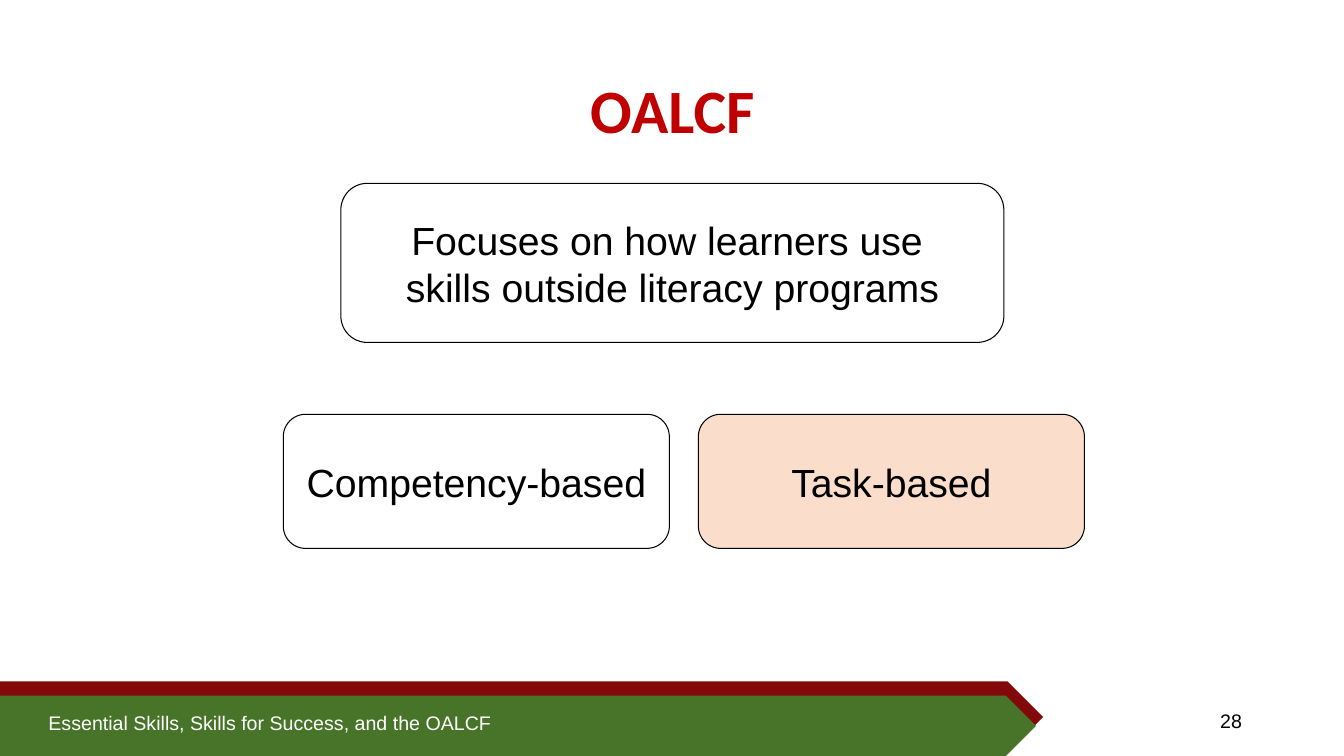
import pptx
import pptx.dml.color
import pptx.enum.shapes
import pptx.enum.text
import pptx.oxml.ns
import pptx.util
from lxml import etree

Cm = pptx.util.Cm
Pt = pptx.util.Pt
Shape = pptx.enum.shapes.MSO_SHAPE
Align = pptx.enum.text.PP_ALIGN
Anchor = pptx.enum.text.MSO_ANCHOR

# Content
TITLE = "OALCF"
FOCUS = ["Focuses on how learners use ", "skills outside literacy programs"]
APPROACHES = [("Competency-based", None), ("Task-based", "ED7D31")]
FOOTER = "Essential Skills, Skills for Success, and the OALCF"
PAGE_NUMBER = "28"

# Footer arrows: top, width, height, colour
ARROWS = [(17.17, 26.29, 1.8, "82080A"), (17.53, 26.11, 1.52, "487429")]

# Approach boxes, in centimetres
BOX_LEFT, BOX_TOP, BOX_WIDTH, BOX_HEIGHT, BOX_GAP = 7.14, 10.44, 9.73, 3.38, 0.73

deck = pptx.Presentation()
deck.slide_width, deck.slide_height = Cm(33.87), Cm(19.05)
page = deck.slides.add_slide(deck.slide_layouts[5])


def colour(value):
    return pptx.dml.color.RGBColor.from_string(value)


def write(box, *lines, size=28, font="Arial", ink="000000", bold=False,
          align=Align.CENTER, anchor=Anchor.MIDDLE, wrap=True, spacing=None):
    frame = box.text_frame
    frame.word_wrap = wrap
    frame.vertical_anchor = anchor
    for index, line in enumerate(lines):
        para = frame.add_paragraph() if index else frame.paragraphs[0]
        para.alignment = align
        para.line_spacing = spacing
        span = para.add_run()
        span.text = line
        span.font.size, span.font.name, span.font.bold = Pt(size), font, bold
        span.font.color.rgb = colour(ink)


def add_shape(kind, left, top, width, height, fill=None, opacity=100, outline=None):
    shape = page.shapes.add_shape(kind, Cm(left), Cm(top), Cm(width), Cm(height))
    shape.shadow.inherit = False
    if fill:
        shape.fill.solid()
        shape.fill.fore_color.rgb = colour(fill)
        tint = shape.fill._xPr.find(".//" + pptx.oxml.ns.qn("a:srgbClr"))
        if opacity < 100:
            etree.SubElement(tint, pptx.oxml.ns.qn("a:alpha"), val=str(opacity * 1000))
    else:
        shape.fill.background()
    if outline:
        shape.line.color.rgb = colour(outline)
        shape.line.width = Pt(0.75)
    else:
        shape.line.fill.background()
    return shape


def add_text(left, top, width, height, text, **style):
    box = page.shapes.add_textbox(Cm(left), Cm(top), Cm(width), Cm(height))
    write(box, text, **style)


# Footer band
for top, width, height, fill in ARROWS:
    add_shape(Shape.PENTAGON, 0, top, width, height, fill)
add_text(0.97, 17.8, 23.55, 0.86, FOOTER, size=14, ink="FFFFFF",
         align=Align.LEFT, anchor=Anchor.TOP)
add_text(23.93, 17.65, 7.62, 1.02, PAGE_NUMBER, size=14, align=Align.RIGHT)

# Title
title = page.shapes.title
title.left, title.top, title.width, title.height = Cm(2.34), Cm(1.02), Cm(29.21), Cm(3.68)
write(title, TITLE, size=44, font="Calibri", ink="C00000", bold=True, spacing=0.9)

# Approach boxes
for column, (label, fill) in enumerate(APPROACHES):
    left = BOX_LEFT + column * (BOX_WIDTH + BOX_GAP)
    approach = add_shape(Shape.ROUNDED_RECTANGLE, left, BOX_TOP, BOX_WIDTH, BOX_HEIGHT,
                         fill, opacity=25, outline="000000")
    write(approach, label, wrap=False)

# Focus box
focus = add_shape(Shape.ROUNDED_RECTANGLE, 8.59, 4.62, 16.71, 4.01, outline="000000")
write(focus, *FOCUS, wrap=False)

deck.save("out.pptx")
